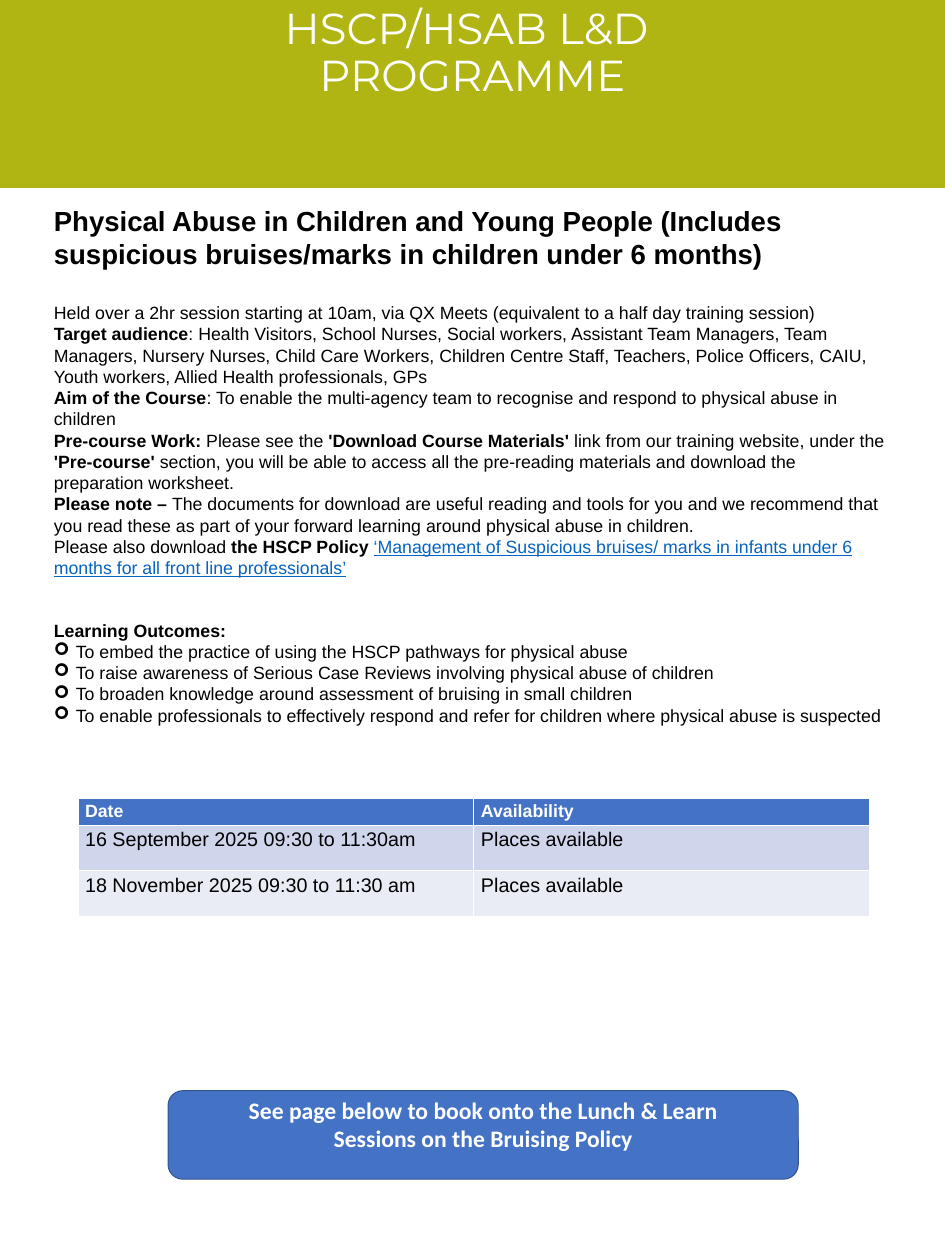
"""Build the one-page flyer for the physical abuse training course."""
from dataclasses import dataclass
from typing import NamedTuple

from lxml import etree
from pptx import Presentation
from pptx import util as u
from pptx.dml.color import RGBColor
from pptx.enum import shapes, text
from pptx.oxml.ns import qn

GREEN, BLUE, DARK_BLUE, LINK_BLUE = "B1B514", "4472C4", "325491", "0563C1"
WHITE, BLACK = "FFFFFF", "000000"
ROW_FILLS = [BLUE, "CFD5EA", "E9EBF5"]


class Span(NamedTuple):
    text: str
    bold: bool = False
    link: bool = False


@dataclass
class Para:
    spans: list[Span]
    size: int = 18
    before: int = 0
    bullet: str = ""


OUTCOMES = [
    "To embed the practice of using the HSCP pathways for physical abuse",
    "To raise awareness of Serious Case Reviews involving physical abuse of children",
    "To broaden knowledge around assessment of bruising in small children",
    "To enable professionals to effectively respond and refer for children where physical abuse is suspected",
]

BODY = [
    Para([Span("Physical Abuse in Children and Young People (Includes suspicious bruises/marks "
               "in children under 6 months)", True)], size=28),
    Para([Span("Held over a 2hr session starting at 10am, via QX Meets "
               "(equivalent to a half day training session)")], before=32),
    Para([Span("Target audience", True),
          Span(": Health Visitors, School Nurses, Social workers, Assistant Team Managers, Team Managers, "
               "Nursery Nurses, Child Care Workers, Children Centre Staff, Teachers, Police Officers, CAIU, "
               "Youth workers, Allied Health professionals, GPs")]),
    Para([Span("Aim of the Course", True),
          Span(": To enable the multi-agency team to recognise and respond to physical abuse in children")]),
    Para([Span("Pre-course Work: ", True),
          Span("Please see the "),
          Span("'Download Course Materials'", True),
          Span(" link from our training website, under the "),
          Span("'Pre-course'", True),
          Span(" section, you will be able to access all the pre-reading materials and download "
               "the preparation worksheet.")]),
    Para([Span("Please note – ", True),
          Span("The documents for download are useful reading and tools for you and we recommend that "
               "you read these as part of your forward learning around physical abuse in children.")]),
    Para([Span("Please also download "),
          Span("the HSCP Policy ", True),
          Span("‘Management of Suspicious bruises/ marks in infants under 6 months "
               "for all front line professionals’", link=True)]),
    Para([Span("Learning Outcomes:", True)], before=42),
    *[Para([Span(outcome)], bullet="➢") for outcome in OUTCOMES],
]

SESSIONS = [
    ("Date", "Availability"),
    ("16 September 2025 09:30 to 11:30am", "Places available"),
    ("18 November 2025 09:30 to 11:30 am", "Places available"),
]


def colour(value: str) -> RGBColor:
    """Turn a hex string into a colour."""
    return RGBColor.from_string(value)


def style(font, name: str, size: int, shade: str, bold: bool = False) -> None:
    """Set the face, size, colour and weight of a font."""
    font.name, font.size, font.bold = name, u.Pt(size), bold
    font.color.rgb = colour(shade)


def place(shape, left: float, top: float, width: float, height: float) -> None:
    """Move and size a shape, in inches."""
    shape.left, shape.top = u.Inches(left), u.Inches(top)
    shape.width, shape.height = u.Inches(width), u.Inches(height)


def add_panel(page, kind, left: float, top: float, width: float, height: float, fill: str, line: str):
    """Add a filled and outlined shape without a shadow."""
    panel = page.shapes.add_shape(kind, *map(u.Inches, (left, top, width, height)))
    panel.shadow.inherit = False
    panel.fill.solid()
    panel.fill.fore_color.rgb = colour(fill)
    panel.line.color.rgb = colour(line)
    panel.line.width = u.Pt(1)
    return panel


def set_bullet(para, bullet: str) -> None:
    """Give a paragraph a hanging bullet, or none."""
    properties = para._p.get_or_add_pPr()
    indent = u.Inches(0.31) if bullet else 0
    properties.set("marL", str(indent))
    properties.set("indent", str(-indent))
    if bullet:
        etree.SubElement(properties, qn("a:buFont")).set("typeface", "Wingdings")
        etree.SubElement(properties, qn("a:buChar")).set("char", bullet)
    else:
        etree.SubElement(properties, qn("a:buNone"))


def fill_body(box, content: list[Para]) -> None:
    """Write the course description into the body placeholder."""
    frame = box.text_frame
    frame.word_wrap = True
    frame.auto_size = text.MSO_AUTO_SIZE.NONE
    frame.vertical_anchor = text.MSO_ANCHOR.TOP
    for index, item in enumerate(content):
        para = frame.add_paragraph() if index else frame.paragraphs[0]
        set_bullet(para, item.bullet)
        para.space_before = u.Pt(item.before)
        style(para.font, "Arial", item.size, BLACK, item.spans[0].bold and len(item.spans) == 1)
        for span in item.spans:
            run = para.add_run()
            run.text = span.text
            if len(item.spans) > 1:
                run.font.bold = span.bold
            if span.link:
                run.font.underline = True
                run.font.color.rgb = colour(LINK_BLUE)


def add_sessions(page) -> None:
    """Add the table of session dates."""
    frame = page.shapes.add_table(len(SESSIONS), 2, *map(u.Inches, (1.1, 11.26, 11.17, 1.67)))
    table = frame.table
    for row, height, fill, values in zip(table.rows, (0.39, 0.64, 0.64), ROW_FILLS, SESSIONS):
        row.height = u.Inches(height)
        header = fill == BLUE
        for cell, value in zip(row.cells, values):
            cell.text = value
            cell.fill.solid()
            cell.fill.fore_color.rgb = colour(fill)
            style(cell.text_frame.paragraphs[0].font, "Arial",
                  18 if header else 20, WHITE if header else BLACK, header)


def add_booking_note(page) -> None:
    """Add the rounded note about booking."""
    note = add_panel(page, shapes.MSO_SHAPE.ROUNDED_RECTANGLE, 2.37, 15.39, 8.89, 1.25, BLUE, DARK_BLUE)
    frame = note.text_frame
    frame.word_wrap = True
    frame.vertical_anchor = text.MSO_ANCHOR.MIDDLE
    frame.margin_bottom = u.Inches(0.35)
    frame.text = "See page below to book onto the Lunch & Learn\nSessions on the Bruising Policy"
    for para in frame.paragraphs:
        para.alignment = text.PP_ALIGN.CENTER
        style(para.font, "Calibri", 24, WHITE, True)


def add_title(page) -> None:
    """Fill the title and put the green band behind it."""
    title = page.shapes.title
    place(title, 0, 0.05, 13.33, 2.26)
    frame = title.text_frame
    frame.word_wrap = True
    frame.auto_size = text.MSO_AUTO_SIZE.NONE
    frame.vertical_anchor = text.MSO_ANCHOR.TOP
    frame.text = "HSCP/HSAB L&D \vPROGRAMME"
    para = frame.paragraphs[0]
    para.alignment = text.PP_ALIGN.CENTER
    para.line_spacing = 0.9
    style(para.font, "Montserrat", 44, WHITE)
    band = add_panel(page, shapes.MSO_SHAPE.RECTANGLE, 0, 0, 13.33, 2.64, GREEN, GREEN)
    title.element.addprevious(band.element)


def main() -> None:
    """Build and save the deck."""
    deck = Presentation()
    deck.slide_width, deck.slide_height = u.Inches(13.33), u.Inches(17.78)
    page = deck.slides.add_slide(deck.slide_layouts[1])
    add_title(page)
    body = page.placeholders[1]
    place(body, 0.66, 2.83, 11.97, 8.41)
    fill_body(body, BODY)
    add_sessions(page)
    add_booking_note(page)
    deck.save("out.pptx")


if __name__ == "__main__":
    main()
